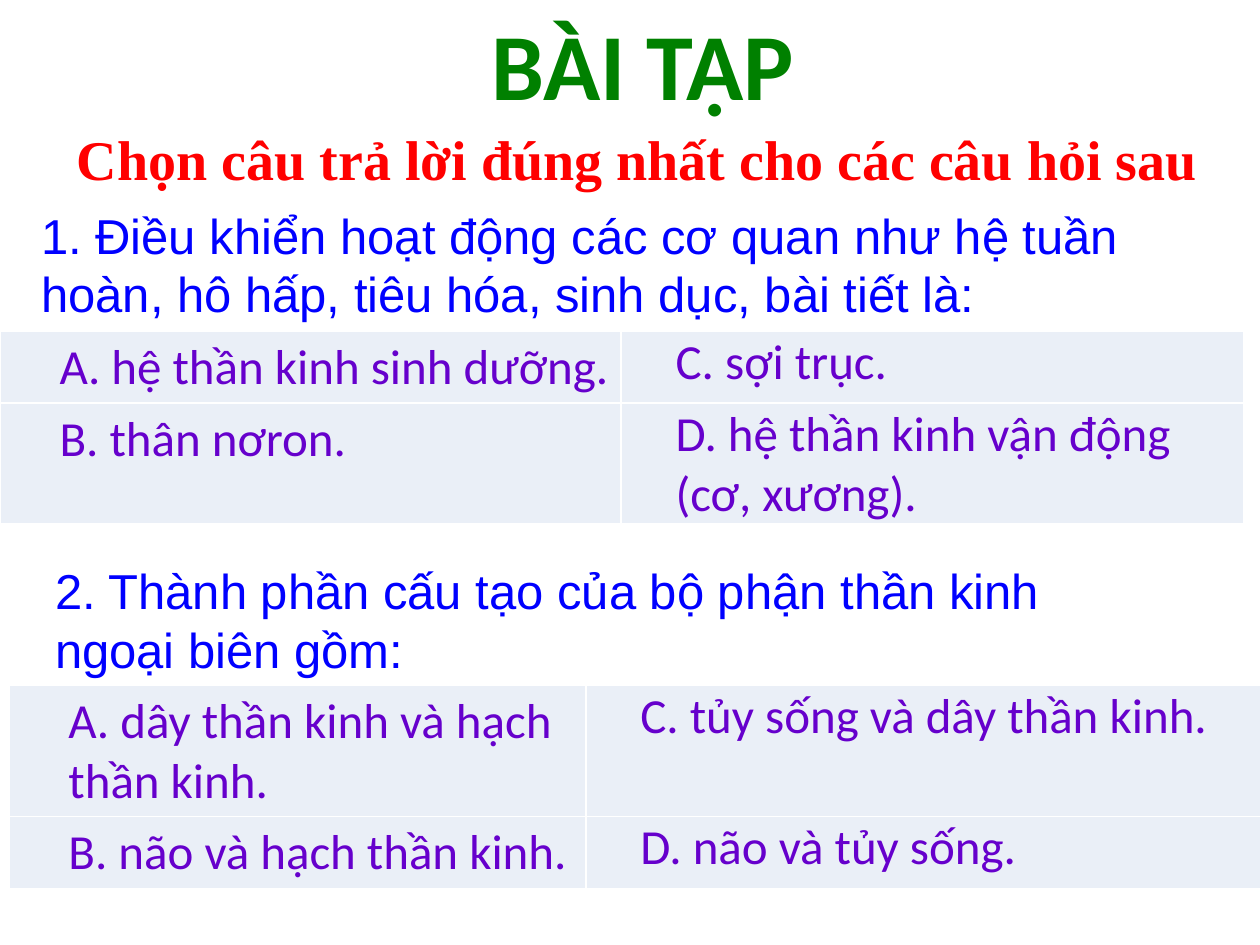
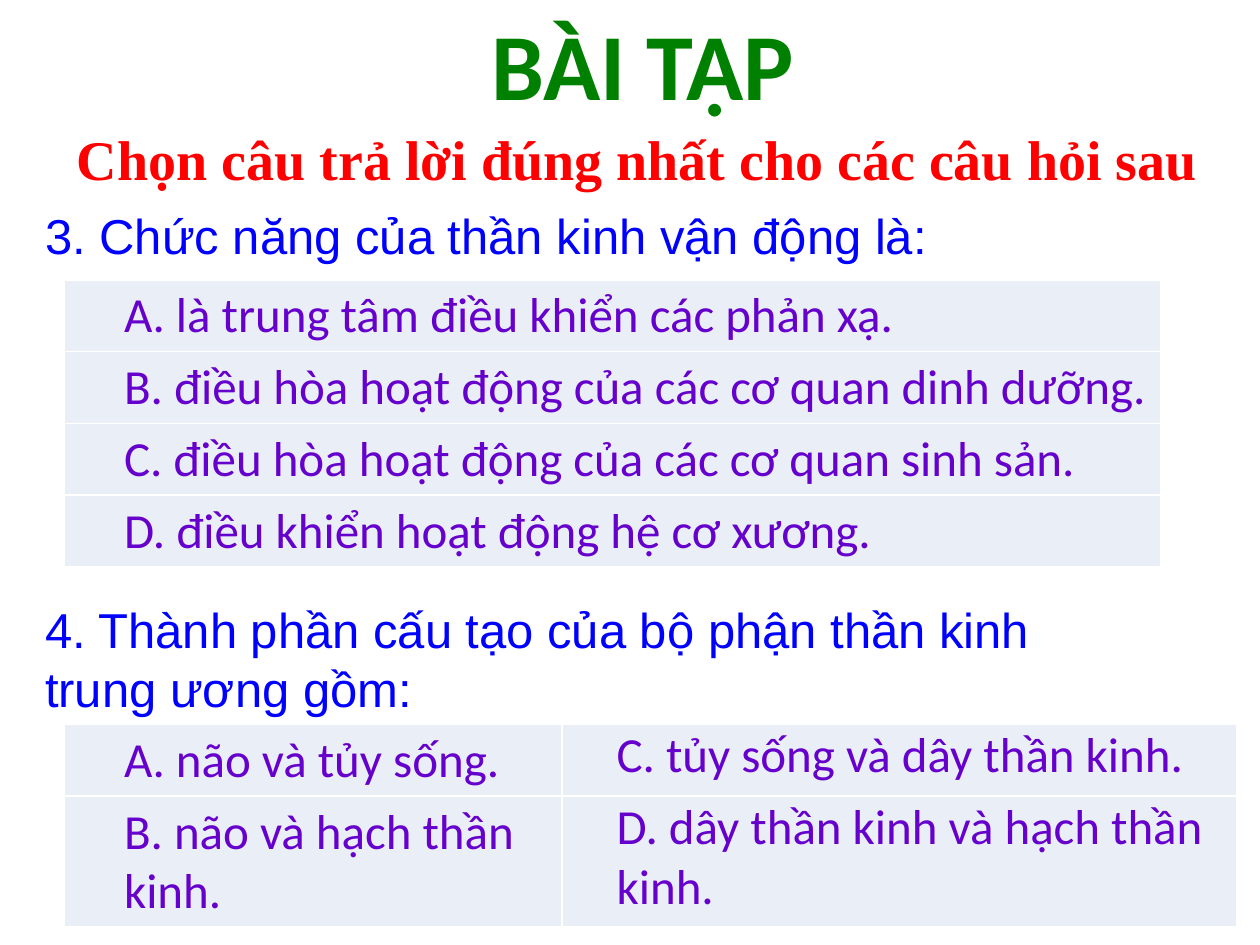
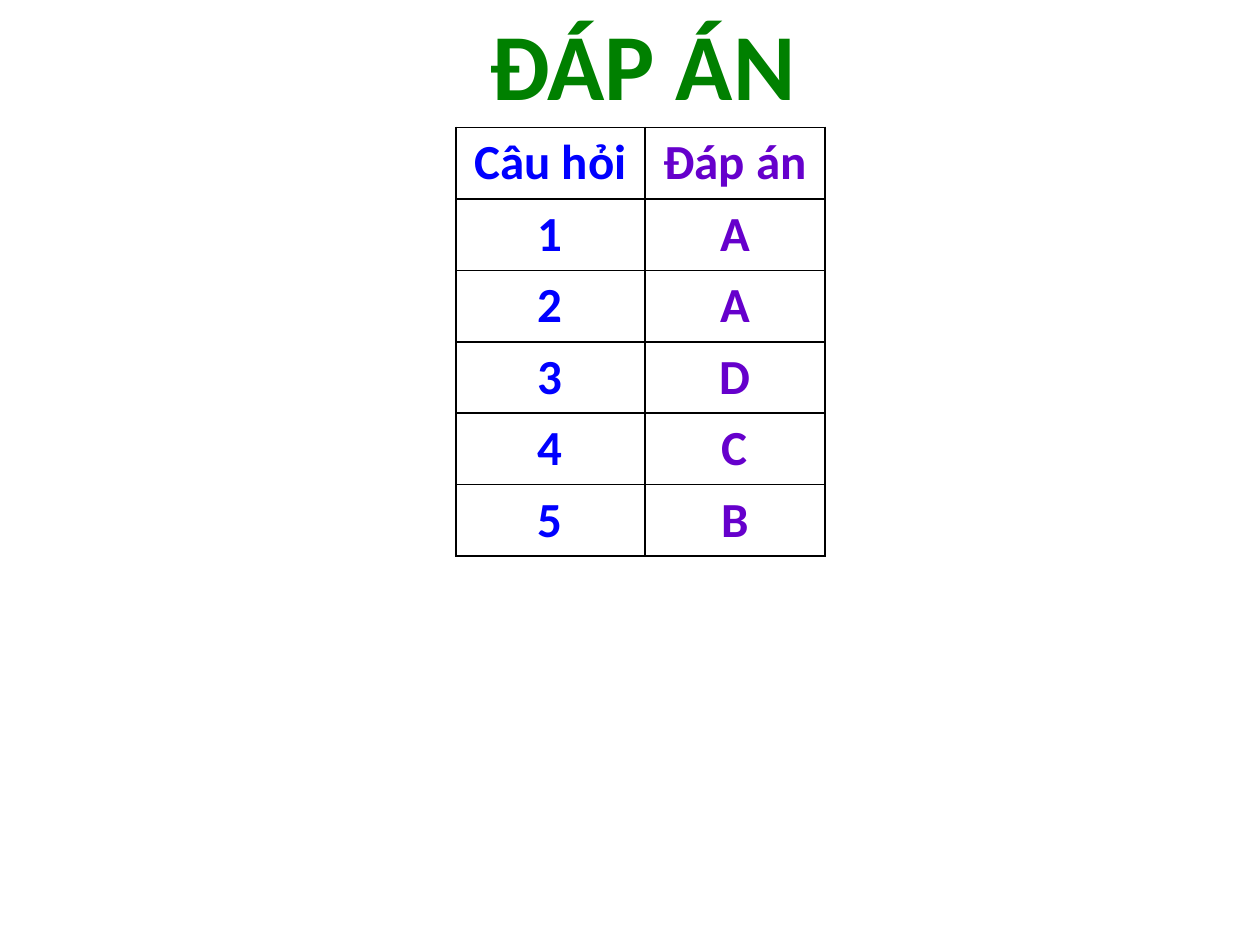
from dataclasses import dataclass

from lxml import etree
from pptx import Presentation
from pptx.dml.color import RGBColor
from pptx.enum import text
from pptx.oxml import ns
from pptx.util import Cm, Pt

# Boxes are (left, top, width, height) and table places (left, top), all in cm.
PROMPT = "Chọn câu trả lời đúng nhất cho các câu hỏi sau"
ONE_LINE, TWO_LINES = 1.44, 2.64
QUIZZES = [
    [
        {
            "question": "1. Điều khiển hoạt động các cơ quan như hệ tuần hoàn, "
                        "hô hấp, tiêu hóa, sinh dục, bài tiết là:",
            "box": (0.58, 4.01, 23.44, TWO_LINES),
            "choices": [
                ["A. hệ thần kinh sinh dưỡng.", "C. sợi trục."],
                ["B. thân nơron.", "D. hệ thần kinh vận động (cơ, xương)."],
            ],
            "place": (0, 6.68),
            "columns": [12.52, 12.55],
            "rows": [ONE_LINE, 2.41],
        },
        {
            "question": "2. Thành phần cấu tạo của bộ phận thần kinh ngoại biên gồm:",
            "box": (0.86, 11.18, 22.89, TWO_LINES),
            "choices": [
                ["A. dây thần kinh và hạch thần kinh.", "C. tủy sống và dây thần kinh."],
                ["B. não và hạch thần kinh.", "D. não và tủy sống."],
            ],
            "place": (0.18, 13.82),
            "columns": [11.63, 13.77],
            "rows": [TWO_LINES, ONE_LINE],
        },
    ],
    [
        {
            "question": "3. Chức năng của thần kinh vận động là:",
            "box": (0.66, 4.01, 18.29, ONE_LINE),
            "choices": [
                ["A. là trung tâm điều khiển các phản xạ."],
                ["B. điều hòa hoạt động của các cơ quan dinh dưỡng."],
                ["C. điều hòa hoạt động của các cơ quan sinh sản."],
                ["D. điều khiển hoạt động hệ cơ xương."],
            ],
            "place": (1.3, 5.64),
            "columns": [22.1],
            "rows": [ONE_LINE] * 4,
        },
        {
            "question": "4. Thành phần cấu tạo của bộ phận thần kinh trung ương gồm:",
            "box": (0.66, 11.96, 21.46, TWO_LINES),
            "choices": [
                ["A. não và tủy sống.", "C. tủy sống và dây thần kinh."],
                ["B. não và hạch thần kinh.", "D. dây thần kinh và hạch thần kinh."],
            ],
            "place": (1.3, 14.6),
            "columns": [10.03, 13.61],
            "rows": [ONE_LINE, TWO_LINES],
        },
    ],
]
ANSWERS = [["Câu hỏi", "Đáp án"], ["1", "A"], ["2", "A"], ["3", "D"], ["4", "C"], ["5", "B"]]


@dataclass(frozen=True)
class Style:
    font: str
    size: int
    color: str
    bold: bool = False


class Theme:
    title = Style("Calibri", 54, "008000", True)
    prompt = Style("Times New Roman", 32, "FF0000", True)
    question = Style("Arial", 28, "0000FF")
    choice = Style("Calibri", 28, "6600CC")
    answer_columns = [Style("Calibri", 28, color, True) for color in ("0000FF", "6600CC")]
    choice_fill = "EAEFF7"
    choice_border = "FFFFFF"
    answer_border = "000000"
    title_box = (9.45, 0, 7, 2.57)
    prompt_box = (1.3, 2.39, 23.29, 1.63)
    choice_indent = 1.07
    # Cell margins: left, top, right, bottom
    first_margins = (0.13, 0.13, 0, 0.13)
    other_margins = (0.03, 0.03, 0.03, 0.03)
    answer_margins = (0.25, 0.1, 0.25, 0.1)


def write(text_frame, content, style):
    text_frame.text = content
    for run in text_frame.paragraphs[0].runs:
        run.font.name = style.font
        run.font.size = Pt(style.size)
        run.font.bold = style.bold
        run.font.color.rgb = RGBColor.from_string(style.color)


def add_text(slide, content, style, box, wrap):
    text_frame = slide.shapes.add_textbox(*map(Cm, box)).text_frame
    write(text_frame, content, style)
    text_frame.word_wrap = wrap
    text_frame.auto_size = text.MSO_AUTO_SIZE.SHAPE_TO_FIT_TEXT


def add_titled_slide(presentation, content):
    slide = presentation.slides.add_slide(presentation.slide_layouts[5])
    title = slide.shapes.title
    title.left, title.top, title.width, title.height = map(Cm, Theme.title_box)
    text_frame = title.text_frame
    write(text_frame, content, Theme.title)
    text_frame.word_wrap = False
    text_frame.auto_size = text.MSO_AUTO_SIZE.NONE
    text_frame.vertical_anchor = text.MSO_ANCHOR.TOP
    text_frame.paragraphs[0].alignment = text.PP_ALIGN.CENTER
    return slide


def set_margins(cell, margins):
    cell.margin_left, cell.margin_top, cell.margin_right, cell.margin_bottom = map(Cm, margins)


def set_borders(cell, color):
    properties = cell._tc.get_or_add_tcPr()
    for index, side in enumerate(("lnL", "lnR", "lnT", "lnB")):
        line = etree.Element(ns.qn(f"a:{side}"), w=str(Pt(1)))
        fill = etree.SubElement(line, ns.qn("a:solidFill"))
        etree.SubElement(fill, ns.qn("a:srgbClr"), val=color)
        properties.insert(index, line)


def add_grid(slide, content, place, columns, rows, border, format_cell):
    """Add a bordered table; format_cell(cell, value, column) fills in each cell."""
    size = (sum(columns), sum(rows))
    frame = slide.shapes.add_table(len(rows), len(columns), *map(Cm, place + size))
    table = frame.table
    table.first_row = table.horz_banding = False
    for column, width in zip(table.columns, columns):
        column.width = Cm(width)
    for row, height, values in zip(table.rows, rows, content):
        row.height = Cm(height)
        for index, (cell, value) in enumerate(zip(row.cells, values)):
            format_cell(cell, value, index)
            set_borders(cell, border)


def format_choice(cell, value, column):
    write(cell.text_frame, value, Theme.choice)
    set_margins(cell, Theme.other_margins if column else Theme.first_margins)
    paragraph_properties = cell.text_frame.paragraphs[0]._p.get_or_add_pPr()
    paragraph_properties.set("marL", str(Cm(Theme.choice_indent)))
    cell.fill.solid()
    cell.fill.fore_color.rgb = RGBColor.from_string(Theme.choice_fill)


def format_answer(cell, value, column):
    write(cell.text_frame, value, Theme.answer_columns[column])
    set_margins(cell, Theme.answer_margins)
    cell.vertical_anchor = text.MSO_ANCHOR.MIDDLE
    cell.text_frame.paragraphs[0].alignment = text.PP_ALIGN.CENTER
    cell.fill.background()


def add_quiz(presentation, items):
    slide = add_titled_slide(presentation, "BÀI TẬP")
    add_text(slide, PROMPT, Theme.prompt, Theme.prompt_box, wrap=False)
    for item in items:
        wrap = item["box"][3] > ONE_LINE
        add_text(slide, item["question"], Theme.question, item["box"], wrap)
        add_grid(slide, item["choices"], item["place"], item["columns"], item["rows"],
                 Theme.choice_border, format_choice)


def main():
    presentation = Presentation()
    presentation.slide_width, presentation.slide_height = Cm(25.4), Cm(19.05)
    for items in QUIZZES:
        add_quiz(presentation, items)
    slide = add_titled_slide(presentation, "ĐÁP ÁN")
    add_grid(slide, ANSWERS, (9.19, 2.57), [3.81, 3.63], [ONE_LINE] * len(ANSWERS),
             Theme.answer_border, format_answer)
    presentation.save("out.pptx")


if __name__ == "__main__":
    main()
